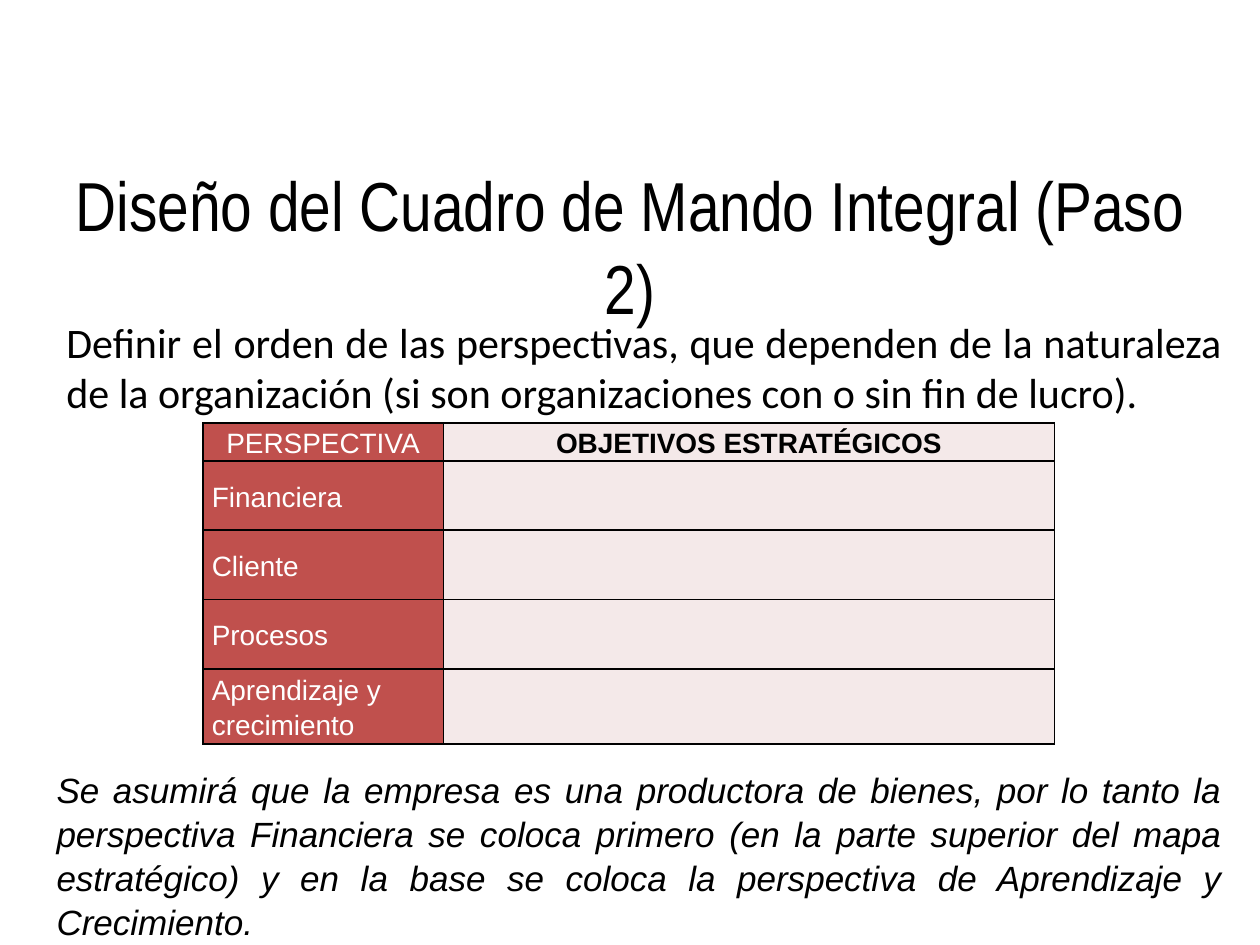
from pptx import Presentation
from pptx.dml.color import RGBColor as Rgb
from pptx.enum.text import MSO_ANCHOR as Anchor, PP_ALIGN as Align
from pptx.oxml import parse_xml
from pptx.oxml.ns import nsdecls
from pptx.util import Cm, Pt

COLOURS = {"ink": "000000", "light": "FFFFFF", "red": "C0504D", "pink": "F4E9E9"}
PERSPECTIVES = ["Financiera", "Cliente", "Procesos", "Aprendizaje y crecimiento"]


class Page:
    """Holds the style and the current slide, and adds each kind of element."""

    def __init__(self, deck):
        self.colours = {name: Rgb.from_string(code) for name, code in COLOURS.items()}
        self.slide = deck.slides.add_slide(deck.slide_layouts[6])

    def add_span(self, para, text, size, font="Arial", colour="ink", bold=False, italic=False):
        span = para.add_run()
        span.text = text
        span.font.name, span.font.size = font, Pt(size)
        span.font.bold, span.font.italic = bold, italic
        span.font.color.rgb = self.colours[colour]

    def add_text(self, place, words, size, align, anchor=Anchor.TOP, spacing=1.0, **style):
        box = self.slide.shapes.add_textbox(*(Cm(length) for length in place))
        frame = box.text_frame
        frame.word_wrap, frame.vertical_anchor = True, anchor
        para = frame.paragraphs[0]
        para.alignment, para.line_spacing = align, spacing
        self.add_span(para, words, size, **style)

    def fill_cell(self, cell, words, fill, align=Align.LEFT, **style):
        cell.fill.solid()
        cell.fill.fore_color.rgb = self.colours[fill]
        cell.vertical_anchor = Anchor.MIDDLE
        cell.margin_left = cell.margin_right = Cm(0.18)
        cell.margin_top = cell.margin_bottom = 0
        if words:
            para = cell.text_frame.paragraphs[0]
            para.alignment, para.line_spacing = align, 1.12
            self.add_span(para, words, 16, **style)
        properties = cell._tc.get_or_add_tcPr()
        for index, side in enumerate(("lnL", "lnR", "lnT", "lnB")):
            properties.insert(index, parse_xml(
                f'<a:{side} {nsdecls("a")} w="{Pt(1)}"><a:solidFill>'
                f'<a:srgbClr val="{COLOURS["ink"]}"/></a:solidFill></a:{side}>'))

    def add_table(self, left, top, widths, heights):
        table = self.slide.shapes.add_table(
            len(heights), len(widths), Cm(left), Cm(top),
            Cm(sum(widths)), Cm(sum(heights))).table
        for column, width in zip(table.columns, widths):
            column.width = Cm(width)
        for row, height in zip(table.rows, heights):
            row.height = Cm(height)
        return table


def main():
    deck = Presentation()
    deck.slide_width, deck.slide_height = Cm(25.4), Cm(19.05)
    page = Page(deck)
    page.add_text((1.27, 3.35, 22.86, 3.18), "Diseño del Cuadro de Mando Integral (Paso 2)",
                  39.6, Align.CENTER, Anchor.MIDDLE, font="Arial Narrow")
    page.add_text((1.09, 6.25, 23.8, 2.69),
                  "Definir el orden de las perspectivas, que dependen de la naturaleza "
                  "de la organización (si son organizaciones con o sin fin de lucro).",
                  24, Align.JUSTIFY, font="Calibri")
    page.add_text((0.89, 15.32, 24, 3.4),
                  "Se asumirá que la empresa es una productora de bienes, por lo tanto la "
                  "perspectiva Financiera se coloca primero (en la parte superior del mapa "
                  "estratégico) y en la base se coloca la perspectiva de Aprendizaje y Crecimiento.",
                  20, Align.JUSTIFY, spacing=1.05, italic=True)

    table = page.add_table(4.09, 8.53, [4.85, 12.32], [0.7] + [1.4] * len(PERSPECTIVES))
    page.fill_cell(table.cell(0, 0), "PERSPECTIVA", "red", Align.CENTER, colour="light")
    page.fill_cell(table.cell(0, 1), "OBJETIVOS ESTRATÉGICOS", "pink", Align.CENTER, bold=True)
    for row, name in enumerate(PERSPECTIVES, start=1):
        page.fill_cell(table.cell(row, 0), name, "red", colour="light")
        page.fill_cell(table.cell(row, 1), "", "pink")
    deck.save("out.pptx")


if __name__ == "__main__":
    main()
